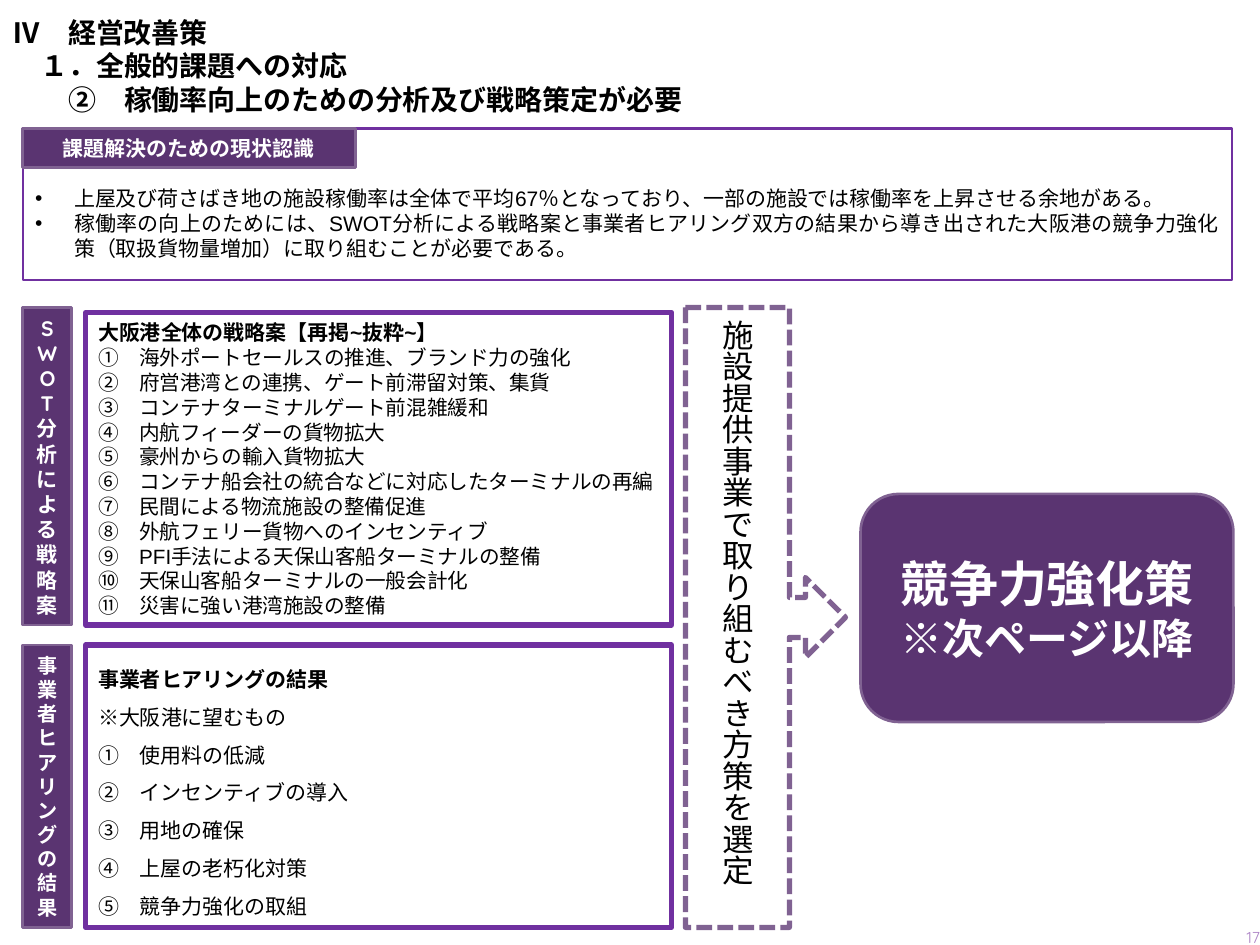
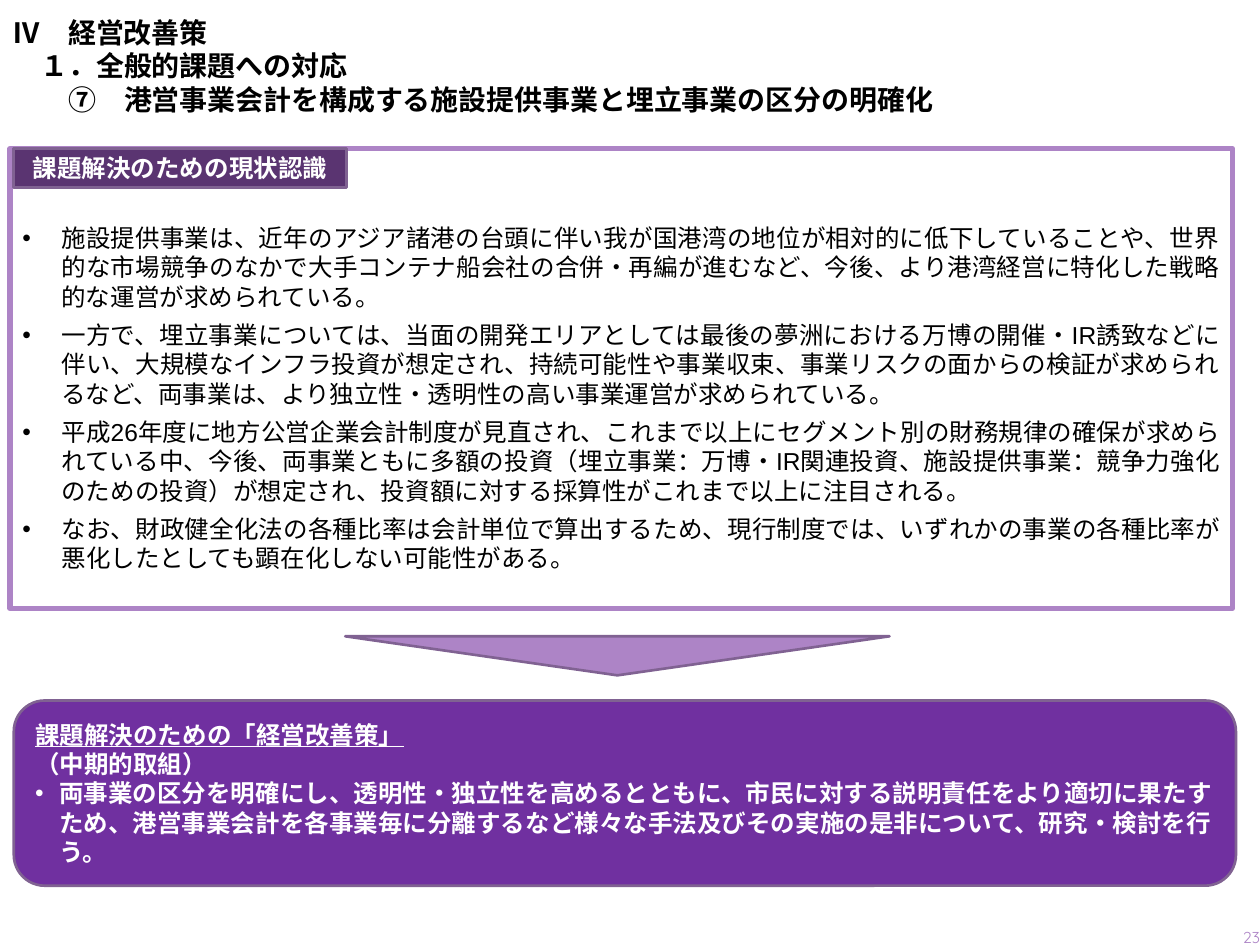
from pptx import Presentation
from pptx.dml.color import RGBColor
from pptx.enum.dml import MSO_LINE
from pptx.enum.shapes import MSO_SHAPE
from pptx.enum.text import MSO_ANCHOR, PP_ALIGN
from pptx.oxml.ns import qn
from pptx.util import Inches, Pt
from lxml.etree import SubElement

DARK, EDGE, VIVID, PALE = "5A3471", "806292", "7030A0", "AD84C6"
WHITE, BLACK = "FFFFFF", "000000"
BODY, LABEL = "Arial", "Quicksand"
PITCH = 1.2
LEFT, MID = PP_ALIGN.LEFT, PP_ALIGN.CENTER
RIGHT, FULL = PP_ALIGN.RIGHT, PP_ALIGN.JUSTIFY


def tint(text):
    return RGBColor.from_string(text)


def style(para, size, font, color, bold=False, lines=1):
    para.line_spacing = Pt(round(size * PITCH * lines, 2))
    for run in para.runs:
        face = run.font
        face.size, face.name, face.bold = Pt(size), font, bold
        face.color.rgb = tint(color)
        east = SubElement(run._r.get_or_add_rPr(), qn("a:ea"))
        east.set("typeface", font)


def write(shape, lines, size, font, color, bold=False, align=MID,
          anchor=MSO_ANCHOR.MIDDLE, space=1):
    frame = shape.text_frame
    frame.word_wrap = True
    frame.vertical_anchor = anchor
    frame.text = "\n".join(lines)
    for para in frame.paragraphs:
        para.alignment = align
        style(para, size, font, color, bold, space)
    return frame


def bullet(para, indent):
    props = para._p.get_or_add_pPr()
    props.set("marL", str(Inches(indent)))
    props.set("indent", str(-Inches(indent)))
    SubElement(props, qn("a:buFont")).set("typeface", BODY)
    SubElement(props, qn("a:buChar")).set("char", "•")


def shape(slide, kind, box, fill=None, line=EDGE, width=1.5):
    item = slide.shapes.add_shape(kind, *map(Inches, box))
    item.shadow.inherit = False
    if fill:
        item.fill.solid()
        item.fill.fore_color.rgb = tint(fill)
    else:
        item.fill.background()
    item.line.color.rgb = tint(line)
    item.line.width = Pt(width)
    return item


def label(slide, box, text, size):
    item = shape(slide, MSO_SHAPE.RECTANGLE, box, DARK)
    write(item, [text], size, LABEL, WHITE, True)


def base(deck, mark, topic, page):
    slide = deck.slides.add_slide(deck.slide_layouts[6])
    title = slide.shapes.add_textbox(*map(Inches, (0, 0.07, 8.62, 1.01)))
    text = f"Ⅳ　経営改善策\v　１．全般的課題への対応\v　　{mark}　{topic}"
    write(title, [text], 16, BODY, BLACK, True, LEFT, MSO_ANCHOR.TOP)
    foot = slide.shapes.add_textbox(*map(Inches, (9.4, 7.24, 0.6, 0.4)))
    write(foot, [str(page)], 9, LABEL, PALE, align=RIGHT)
    foot.text_frame.margin_right = 0
    return slide


def status(slide, box, points, size, top, gap, line, width, shift):
    item = shape(slide, MSO_SHAPE.RECTANGLE, box, None, line, width)
    frame = write(item, points, size, BODY, BLACK, align=FULL,
                  anchor=MSO_ANCHOR.TOP)
    frame.margin_top = Inches(top)
    for para in frame.paragraphs:
        para.space_after = Pt(gap)
        bullet(para, 0.31)
    tab = (box[0] + shift, box[1], 2.64, 0.31)
    label(slide, tab, "課題解決のための現状認識", size)


def panel(slide, box, side, size, head, items, inset=0, note=None, space=1,
          small=12):
    left, top, width, height = box
    label(slide, (left, top, 0.39, height), side, size)
    item = shape(slide, MSO_SHAPE.RECTANGLE,
                 (left + 0.5, top + inset, width - 0.5, height - inset),
                 None, VIVID, 3)
    rows = [f"{mark}　{text}" for mark, text in zip("①②③④⑤⑥⑦⑧⑨⑩⑪", items)]
    lines = [head] + ([note] if note else []) + rows
    frame = write(item, lines, small, BODY, BLACK, align=FULL, space=space)
    style(frame.paragraphs[0], 12, BODY, BLACK, True, space)


def choice(slide, box):
    item = shape(slide, MSO_SHAPE.RIGHT_ARROW_CALLOUT, box, None, EDGE, 3)
    item.line.dash_style = MSO_LINE.SQUARE_DOT
    frame = write(item, ["施設提供事業で取り組むべき方策を選定"], 18, LABEL, BLACK)
    frame._txBody.bodyPr.set("vert", "eaVert")


def goal(slide, box):
    item = shape(slide, MSO_SHAPE.ROUNDED_RECTANGLE, box, DARK)
    frame = write(item, ["競争力強化策", "※次ページ以降"], 28, LABEL, WHITE, True)
    style(frame.paragraphs[1], 24, LABEL, WHITE, True)


def remedy(slide, box):
    item = shape(slide, MSO_SHAPE.ROUNDED_RECTANGLE, box, VIVID)
    lines = [
        "課題解決のための「経営改善策」",
        "（中期的取組）",
        "両事業の区分を明確にし、透明性・独立性を高めるとともに、市民に対する説明責任をより適切に果たすため、港営事業会計を各事業毎に分離するなど様々な手法及びその実施の是非について、研究・検討を行う。",
    ]
    frame = write(item, lines, 14, LABEL, WHITE, True, LEFT)
    frame.paragraphs[0].runs[0].font.underline = True
    bullet(frame.paragraphs[2], 0.19)


def usage(deck):
    slide = base(deck, "②", "稼働率向上のための分析及び戦略策定が必要", 17)
    points = [
        "上屋及び荷さばき地の施設稼働率は全体で平均67％となっており、一部の施設では稼働率を上昇させる余地がある。",
        "稼働率の向上のためには、SWOT分析による戦略案と事業者ヒアリング双方の結果から導き出された大阪港の競争力強化策（取扱貨物量増加）に取り組むことが必要である。",
    ]
    status(slide, (0.18, 1.02, 9.6, 1.2), points, 12, 0.45, 0, VIVID, 1.25, 0)
    plans = [
        "海外ポートセールスの推進、ブランド力の強化",
        "府営港湾との連携、ゲート前滞留対策、集貨",
        "コンテナターミナルゲート前混雑緩和",
        "内航フィーダーの貨物拡大",
        "豪州からの輸入貨物拡大",
        "コンテナ船会社の統合などに対応したターミナルの再編",
        "民間による物流施設の整備促進",
        "外航フェリー貨物へのインセンティブ",
        "PFI手法による天保山客船ターミナルの整備",
        "天保山客船ターミナルの一般会計化",
        "災害に強い港湾施設の整備",
    ]
    panel(slide, (0.18, 2.44, 5.15, 2.52), "SWOT分析による戦略案", 12,
          "大阪港全体の戦略案【再掲~抜粋~】", plans, inset=0.04, small=11.8)
    wants = ["使用料の低減", "インセンティブの導入", "用地の確保",
             "上屋の老朽化対策", "競争力強化の取組"]
    panel(slide, (0.18, 5.12, 5.15, 2.24), "事業者ヒアリングの結果", 11.5,
          "事業者ヒアリングの結果", wants, note="※大阪港に望むもの", space=1.5)
    choice(slide, (5.44, 2.44, 1.27, 4.92))
    goal(slide, (6.83, 3.92, 2.96, 1.81))


def split(deck):
    slide = base(deck, "⑦", "港営事業会計を構成する施設提供事業と埋立事業の区分の明確化", 23)
    points = [
        "施設提供事業は、近年のアジア諸港の台頭に伴い我が国港湾の地位が相対的に低下していることや、世界的な市場競争のなかで大手コンテナ船会社の合併・再編が進むなど、今後、より港湾経営に特化した戦略的な運営が求められている。",
        "一方で、埋立事業については、当面の開発エリアとしては最後の夢洲における万博の開催・IR誘致などに伴い、大規模なインフラ投資が想定され、持続可能性や事業収束、事業リスクの面からの検証が求められるなど、両事業は、より独立性・透明性の高い事業運営が求められている。",
        "平成26年度に地方公営企業会計制度が見直され、これまで以上にセグメント別の財務規律の確保が求められている中、今後、両事業ともに多額の投資（埋立事業：万博・IR関連投資、施設提供事業：競争力強化のための投資）が想定され、投資額に対する採算性がこれまで以上に注目される。",
        "なお、財政健全化法の各種比率は会計単位で算出するため、現行制度では、いずれかの事業の各種比率が悪化したとしても顕在化しない可能性がある。",
    ]
    status(slide, (0.08, 1.18, 9.7, 3.65), points, 14, 0.59, 5, PALE, 3, 0.03)
    remedy(slide, (0.11, 5.56, 9.7, 1.47))
    arrow = shape(slide, MSO_SHAPE.ISOSCELES_TRIANGLE,
                  (2.74, 5.05, 4.32, 0.31), PALE)
    arrow.rotation = 180


def main():
    deck = Presentation()
    deck.slide_width, deck.slide_height = Inches(10), Inches(7.5)
    usage(deck)
    split(deck)
    deck.save("out.pptx")


if __name__ == "__main__":
    main()
